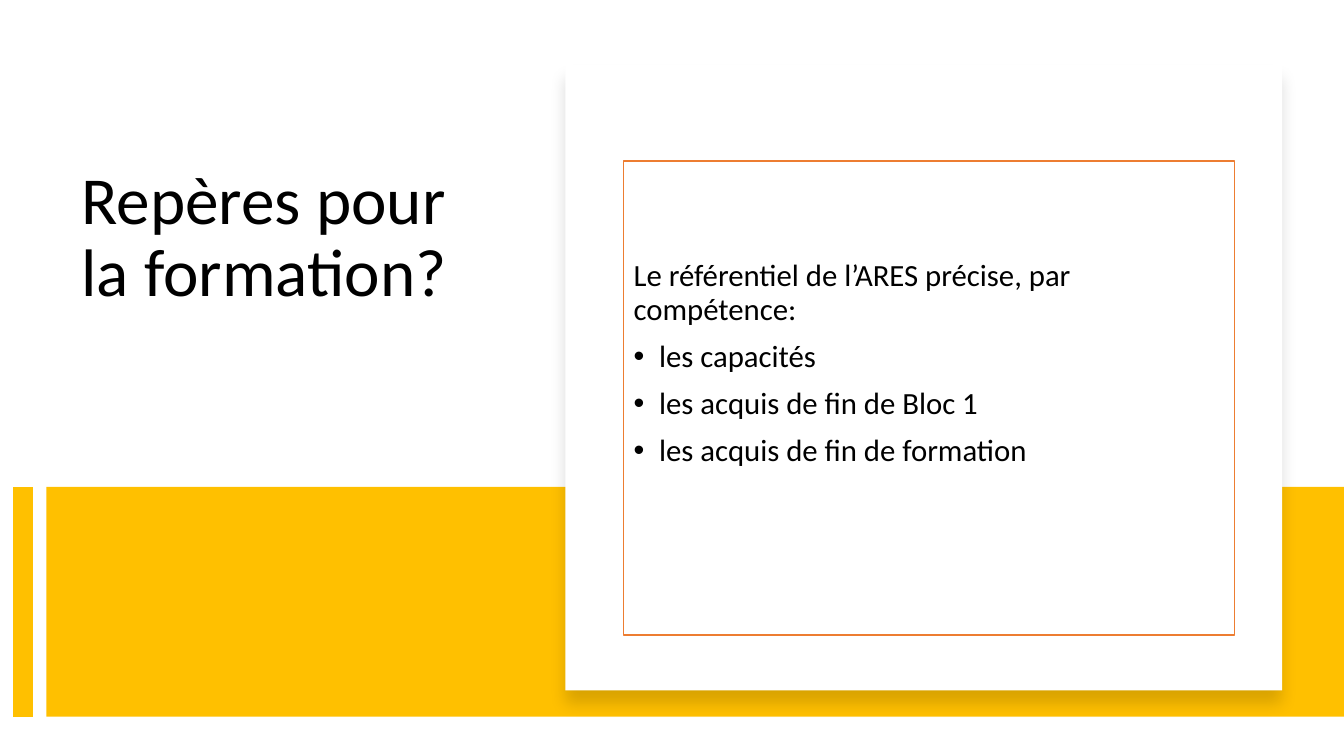
import pptx
import pptx.util
import pptx.dml.color
import pptx.enum.shapes
import pptx.enum.text
import pptx.oxml
import pptx.oxml.ns
from lxml import etree

Cm = pptx.util.Cm
Pt = pptx.util.Pt


def color(hex_value):
    return pptx.dml.color.RGBColor.from_string(hex_value)


def add_xml(parent, tag, **attributes):
    element = etree.SubElement(parent, pptx.oxml.ns.qn(tag))
    for name, value in attributes.items():
        element.set(name, str(value))
    return element


class SlideBuilder:
    FONT = "Calibri"
    TEXT = "000000"
    PAPER = "FFFFFF"
    BAND = "FFC000"
    FRAME = "ED7D31"

    def __init__(self, presentation):
        self.slide = presentation.slides.add_slide(presentation.slide_layouts[5])

    def format_frame(self, frame, size):
        frame.word_wrap = True
        frame.auto_size = pptx.enum.text.MSO_AUTO_SIZE.NONE
        frame.vertical_anchor = pptx.enum.text.MSO_ANCHOR.TOP
        for paragraph in frame.paragraphs:
            paragraph.alignment = pptx.enum.text.PP_ALIGN.LEFT
            paragraph.line_spacing = 0.9
            for run in paragraph.runs:
                run.font.name = self.FONT
                run.font.size = Pt(size)
                run.font.color.rgb = color(self.TEXT)

    def title(self, text, left, top, width, height):
        title = self.slide.shapes.title
        title.left, title.top = Cm(left), Cm(top)
        title.width, title.height = Cm(width), Cm(height)
        title.text_frame.text = text
        self.format_frame(title.text_frame, 48)

    def rectangle(self, left, top, width, height, fill, line=None):
        shape = self.slide.shapes.add_shape(
            pptx.enum.shapes.MSO_SHAPE.RECTANGLE,
            Cm(left), Cm(top), Cm(width), Cm(height))
        shape.shadow.inherit = False
        shape.fill.solid()
        shape.fill.fore_color.rgb = color(fill)
        if line:
            shape.line.color.rgb = color(line)
            shape.line.width = Pt(1)
        else:
            shape.line.fill.background()
        return shape

    def vertical_line(self, x, top, bottom, width):
        line = self.slide.shapes.add_connector(
            pptx.enum.shapes.MSO_CONNECTOR.STRAIGHT,
            Cm(x), Cm(top), Cm(x), Cm(bottom))
        line.line.color.rgb = color(self.BAND)
        line.line.width = Pt(width)
        add_xml(line._element.spPr, "a:effectLst")

    def card(self, left, top, width, height):
        card = self.rectangle(left, top, width, height, self.PAPER)
        effects = card._element.spPr.find(pptx.oxml.ns.qn("a:effectLst"))
        shadow = add_xml(effects, "a:outerShdw", blurRad=Pt(11), dist=Pt(10),
                         dir=90 * 60000, algn="t", rotWithShape=0)
        shade = add_xml(shadow, "a:srgbClr", val="000000")
        add_xml(shade, "a:alpha", val=15000)

    def framed_list(self, intro, items, left, top, width, height):
        shape = self.rectangle(left, top, width, height, self.PAPER, self.FRAME)
        frame = shape.text_frame
        frame.text = "\n".join([intro] + items)
        self.format_frame(frame, 22)
        frame.margin_top = Cm(2.5)
        for paragraph in frame.paragraphs[1:]:
            paragraph.space_before = Pt(10)
            properties = paragraph._p.get_or_add_pPr()
            properties.set("marL", str(Cm(0.64)))
            properties.set("indent", str(-Cm(0.64)))
            add_xml(properties, "a:buFont", typeface="Arial")
            add_xml(properties, "a:buChar", char="•")


def main():
    presentation = pptx.Presentation()
    presentation.slide_width = Cm(33.87)
    presentation.slide_height = Cm(19.05)
    builder = SlideBuilder(presentation)

    # Title
    builder.title("Repères pour la formation?", 1.8, 4.06, 10.54, 7.47)

    # Yellow band with its side bar
    band_top, band_height = 12.27, 5.79
    builder.rectangle(1.17, band_top, 32.7, band_height, builder.BAND)
    builder.vertical_line(0.58, band_top, band_top + band_height, 14)

    # White card with the framed list
    builder.card(14.25, 1.63, 18.06, 15.77)
    builder.framed_list(
        "Le référentiel de l’ARES précise, par compétence:",
        ["les capacités", "les acquis de fin de Bloc 1",
         "les acquis de fin de formation"],
        15.72, 4.06, 15.39, 11.94)

    presentation.save("out.pptx")


if __name__ == "__main__":
    main()
